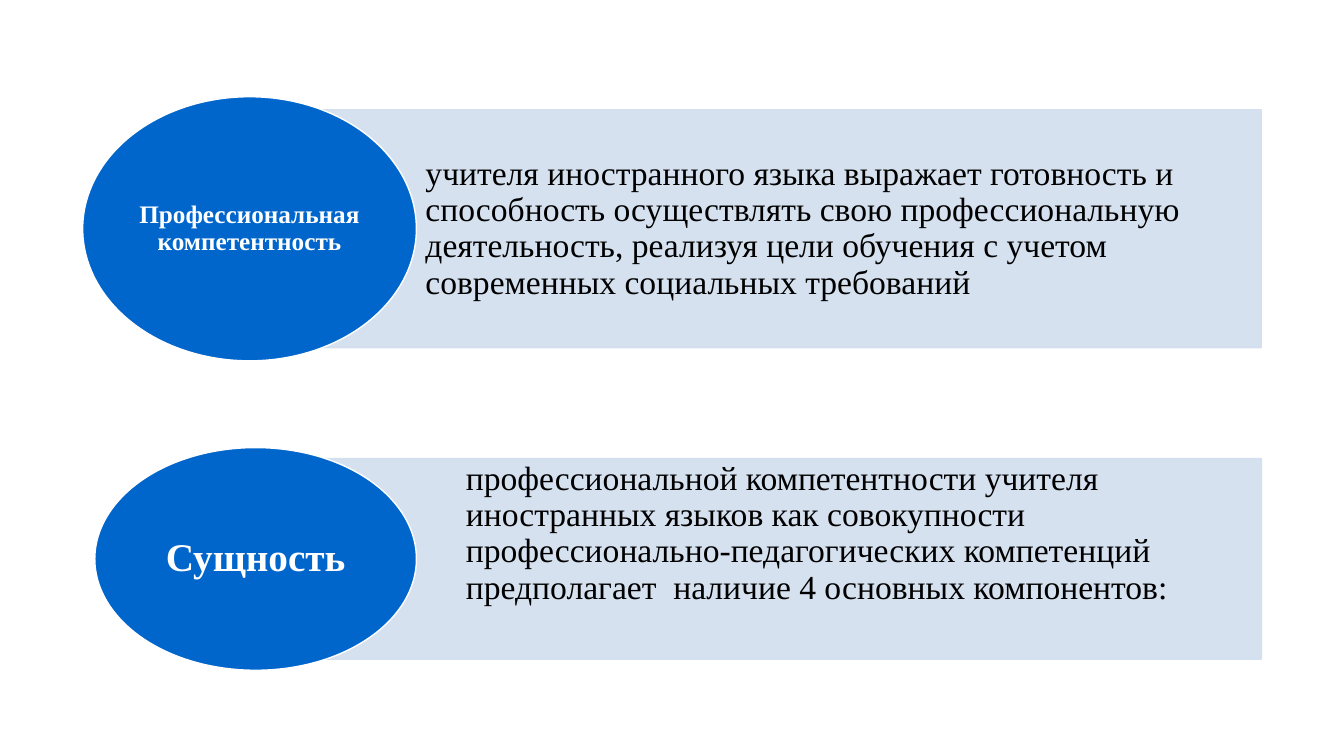
from dataclasses import dataclass

from lxml import etree
from pptx import Presentation
from pptx.dml.color import RGBColor
from pptx.enum.shapes import MSO_SHAPE
from pptx.enum.text import MSO_ANCHOR, PP_ALIGN
from pptx.oxml.ns import qn
from pptx.util import Emu, Pt

RECTANGLE, OVAL = MSO_SHAPE.RECTANGLE, MSO_SHAPE.OVAL
LEFT, CENTER = PP_ALIGN.LEFT, PP_ALIGN.CENTER
MIDDLE = MSO_ANCHOR.MIDDLE

EMU_PER_PX = 9144  # 100 px to the inch
FONT = "Times New Roman"
BLUE, PALE_BLUE, WHITE, BLACK = "0066CC", "D2DEEF", "FFFFFF", "000000"
BAND_OPACITY = 90
NO_INSETS = (0, 0, 0, 0)


@dataclass(frozen=True)
class Box:
    left: int
    top: int
    width: int
    height: int


@dataclass(frozen=True)
class Statement:
    term: str
    term_size: int
    oval: Box
    text: str
    band: Box
    insets: tuple[int, int, int, int]


STATEMENTS = (
    Statement(
        "Профессиональная компетентность", 18, Box(82, 96, 331, 262),
        "учителя иностранного языка выражает готовность и способность "
        "осуществлять свою профессиональную деятельность, реализуя цели "
        "обучения с учетом современных социальных требований",
        Box(264, 109, 987, 236), (158, 19, 19, 19),
    ),
    Statement(
        "Сущность", 28, Box(94, 444, 319, 221),
        "профессиональной компетентности учителя иностранных языков как "
        "совокупности профессионально-педагогических компетенций "
        "предполагает  наличие 4 основных компонентов:",
        Box(312, 455, 939, 199), (150, 0, 19, 50),
    ),
)


def px(length: int) -> Emu:
    return Emu(length * EMU_PER_PX)


def rgb(value: str) -> RGBColor:
    return RGBColor.from_string(value)


def add_panel(slide, kind, box: Box, fill: str, line: str):
    panel = slide.shapes.add_shape(
        kind, px(box.left), px(box.top), px(box.width), px(box.height))
    panel.shadow.inherit = False
    panel.fill.solid()
    panel.fill.fore_color.rgb = rgb(fill)
    panel.line.color.rgb = rgb(line)
    panel.line.width = Pt(1)
    return panel


def set_opacity(panel, percent: int) -> None:
    """Apply the same opacity to the fill and the outline."""
    for color in panel.element.spPr.iter(qn("a:srgbClr")):
        etree.SubElement(color, qn("a:alpha"), val=str(percent * 1000))


def write_text(panel, text: str, size: int, color: str, bold: bool,
               align, insets: tuple[int, int, int, int]) -> None:
    """Fill a panel with one paragraph; insets run left, top, right, bottom."""
    frame = panel.text_frame
    frame.word_wrap = True
    frame.vertical_anchor = MIDDLE
    (frame.margin_left, frame.margin_top,
     frame.margin_right, frame.margin_bottom) = map(px, insets)
    paragraph = frame.paragraphs[0]
    paragraph.text = text
    paragraph.alignment = align
    paragraph.line_spacing = 0.9
    paragraph.font.name = FONT
    paragraph.font.size = Pt(size)
    paragraph.font.bold = bold
    paragraph.font.color.rgb = rgb(color)


def add_statement(slide, statement: Statement) -> None:
    band = add_panel(slide, RECTANGLE, statement.band, PALE_BLUE, PALE_BLUE)
    set_opacity(band, BAND_OPACITY)
    write_text(band, statement.text, 24, BLACK, False, LEFT, statement.insets)
    oval = add_panel(slide, OVAL, statement.oval, BLUE, WHITE)
    write_text(oval, statement.term, statement.term_size, WHITE, True,
               CENTER, NO_INSETS)


def main() -> None:
    presentation = Presentation()
    presentation.slide_width, presentation.slide_height = px(1333), px(750)
    slide = presentation.slides.add_slide(presentation.slide_layouts[6])
    for statement in STATEMENTS:
        add_statement(slide, statement)
    presentation.save("out.pptx")


if __name__ == "__main__":
    main()
